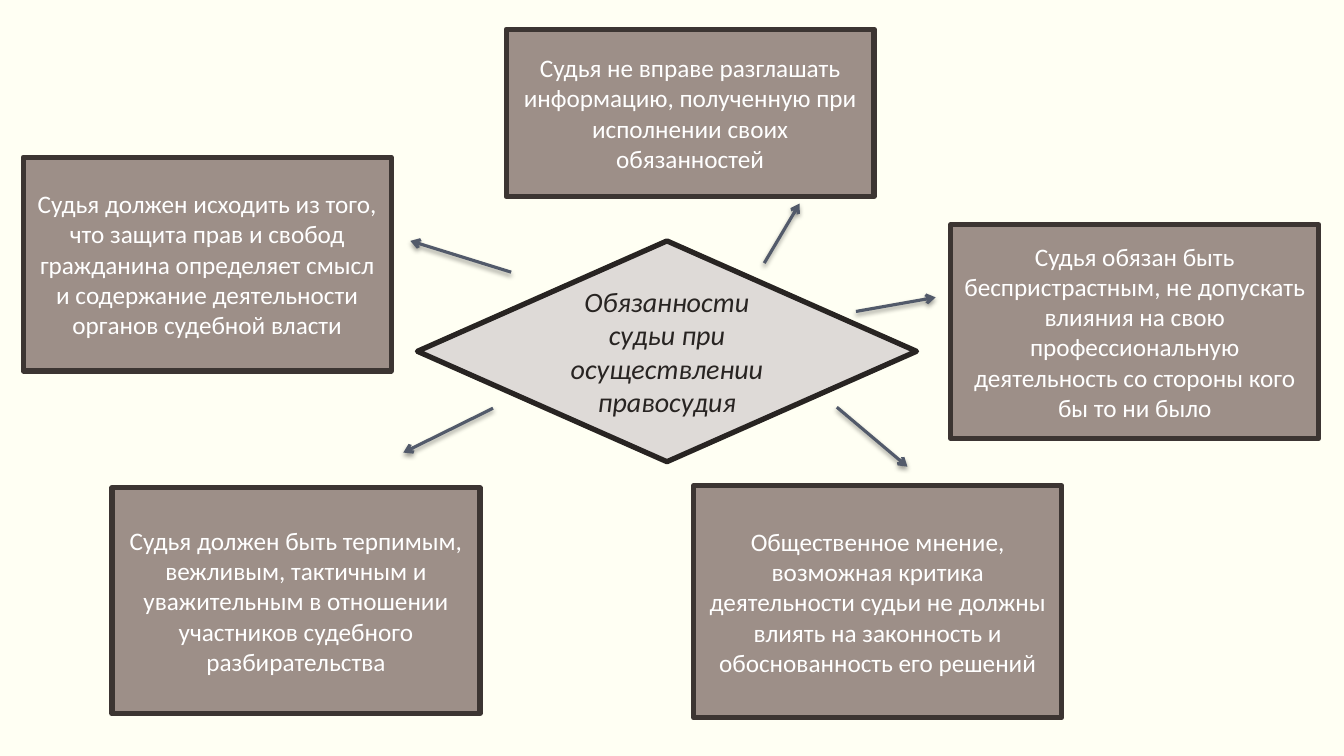
import pptx
import pptx.util
import pptx.dml.color
import pptx.enum.shapes
import pptx.enum.text
import pptx.oxml
import pptx.oxml.ns

Inches = pptx.util.Inches
Pt = pptx.util.Pt
RGBColor = pptx.dml.color.RGBColor
Kind = pptx.enum.shapes.MSO_SHAPE

CREAM = RGBColor(0xFF, 0xFF, 0xF3)
TAUPE = RGBColor(0x9D, 0x8F, 0x88)
BROWN = RGBColor(0x3C, 0x35, 0x32)
PALE = RGBColor(0xDE, 0xDA, 0xD7)
DARK = RGBColor(0x28, 0x24, 0x22)
SLATE = RGBColor(0x52, 0x5A, 0x6A)
WHITE = RGBColor(0xFF, 0xFF, 0xFF)

FONT = "Calibri"
WIDTH = 3.65
TOPIC = "Обязанности судьи при осуществлении правосудия"
DUTIES = [
    (0.23, 1.56, 2.12, "Судья должен исходить из того, что защита прав и свобод "
     "гражданина определяет смысл и содержание деятельности органов судебной власти"),
    (9.43, 2.23, 2.12, "Судья обязан быть беспристрастным, не допускать влияния на свою "
     "профессиональную деятельность со стороны кого бы то ни было"),
    (6.88, 4.82, 2.3, "Общественное мнение, возможная критика деятельности судьи "
     "не должны влиять на законность и обоснованность его решений"),
    (1.11, 4.84, 2.24, "Судья должен быть терпимым, вежливым, тактичным и уважительным "
     "в отношении участников судебного разбирательства"),
    (5.02, 0.29, 1.66, "Судья не вправе разглашать информацию, полученную "
     "при исполнении своих обязанностей"),
]
ARROWS = [
    (4.89, 4.05, 4, 4.49),
    (5.07, 2.7, 4.07, 2.39),
    (8.3, 4.04, 9, 4.63),
    (8.49, 3.09, 9.28, 2.95),
    (7.58, 2.61, 7.93, 2.02),
]
SHADOW = (
    f'<a:effectLst {pptx.oxml.ns.nsdecls("a")}>'
    f'<a:outerShdw blurRad="{Pt(3.5)}" dist="{Pt(2)}" dir="5400000" rotWithShape="0">'
    '<a:srgbClr val="000000"><a:alpha val="38000"/></a:srgbClr>'
    '</a:outerShdw></a:effectLst>'
)
HEAD = f'<a:tailEnd {pptx.oxml.ns.nsdecls("a")} type="arrow"/>'


def add_arrow(slide, ends):
    """Draw a shadowed arrow between two points."""
    link = slide.shapes.add_connector(
        pptx.enum.shapes.MSO_CONNECTOR.STRAIGHT, *map(Inches, ends))
    link.line.color.rgb = SLATE
    link.line.width = Pt(2.25)
    props = link._element.spPr
    props.find(pptx.oxml.ns.qn("a:ln")).append(pptx.oxml.parse_xml(HEAD))
    props.append(pptx.oxml.parse_xml(SHADOW))


def add_box(slide, kind, place, text, fill, edge, color, size, slant=False):
    """Draw a filled shape with centred text."""
    box = slide.shapes.add_shape(kind, *map(Inches, place))
    box.shadow.inherit = False
    box.fill.solid()
    box.fill.fore_color.rgb = fill
    box.line.color.rgb = edge
    box.line.width = Pt(3.78)
    frame = box.text_frame
    frame.text = text
    frame.word_wrap = True
    frame.vertical_anchor = pptx.enum.text.MSO_ANCHOR.MIDDLE
    para = frame.paragraphs[0]
    para.alignment = pptx.enum.text.PP_ALIGN.CENTER
    font = para.runs[0].font
    font.name = FONT
    font.size = Pt(size)
    font.italic = slant
    font.color.rgb = color


def main():
    """Build the slide and save it."""
    deck = pptx.Presentation()
    deck.slide_width = Inches(13.33)
    deck.slide_height = Inches(7.5)
    slide = deck.slides.add_slide(deck.slide_layouts[6])
    slide.background.fill.solid()
    slide.background.fill.fore_color.rgb = CREAM
    for ends in ARROWS:
        add_arrow(slide, ends)
    for left, top, height, text in DUTIES:
        add_box(slide, Kind.RECTANGLE, (left, top, WIDTH, height), text,
                TAUPE, BROWN, WHITE, 18)
    add_box(slide, Kind.FLOWCHART_DECISION, (4.14, 2.39, 4.95, 2.19), TOPIC,
            PALE, DARK, DARK, 20, slant=True)
    deck.save("out.pptx")


if __name__ == "__main__":
    main()
